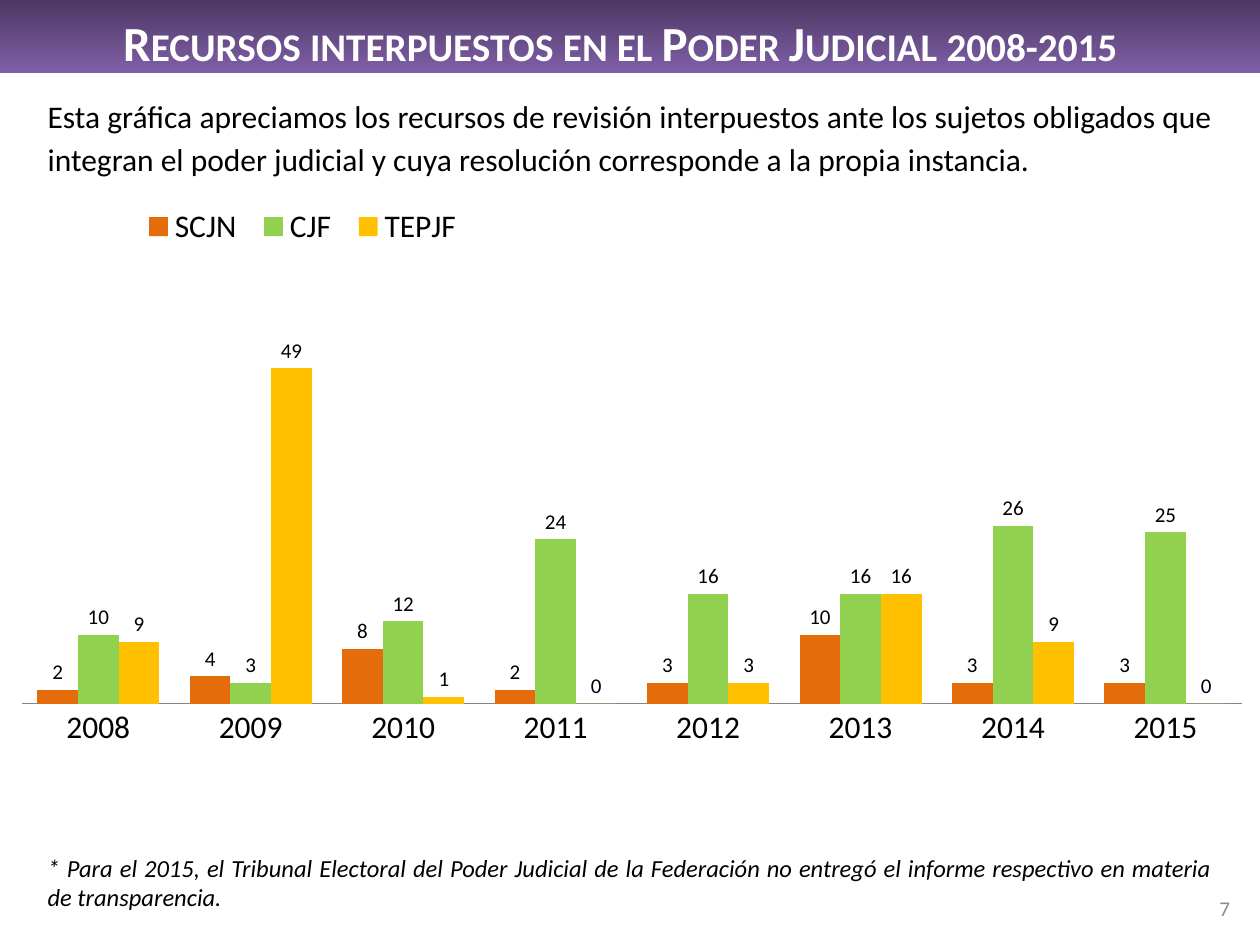
from lxml import etree
from pptx import Presentation
from pptx.chart.data import CategoryChartData
from pptx.dml.color import RGBColor
from pptx.enum.chart import XL_CHART_TYPE, XL_LABEL_POSITION, XL_LEGEND_POSITION, XL_TICK_MARK
from pptx.enum.shapes import MSO_SHAPE
from pptx.enum.text import MSO_ANCHOR, PP_ALIGN
from pptx.oxml import parse_xml
from pptx.oxml.ns import nsdecls, qn
from pptx.util import Inches, Pt

COLUMNS = XL_CHART_TYPE.COLUMN_CLUSTERED
ABOVE = XL_LABEL_POSITION.OUTSIDE_END
BOTTOM = XL_LEGEND_POSITION.BOTTOM
NO_TICK = XL_TICK_MARK.NONE
RECT = MSO_SHAPE.RECTANGLE
TOP, MIDDLE = MSO_ANCHOR.TOP, MSO_ANCHOR.MIDDLE
CENTER, RIGHT, JUSTIFY = PP_ALIGN.CENTER, PP_ALIGN.RIGHT, PP_ALIGN.JUSTIFY

FONT = "Calibri"
HEX = {"dark": "4C3863", "light": "805FA7", "white": "FFFFFF", "black": "000000",
       "gray": "8C8C8C", "axis": "868686",
       "SCJN": "E46C0A", "CJF": "92D050", "TEPJF": "FFC000"}
COLOR = {name: RGBColor.from_string(code) for name, code in HEX.items()}
YEARS = [str(year) for year in range(2008, 2016)]
COUNTS = {"SCJN": [2, 4, 8, 2, 3, 10, 3, 3],
          "CJF": [10, 3, 12, 24, 16, 16, 26, 25],
          "TEPJF": [9, 49, 1, 0, 3, 16, 9, 0]}


def write(box, text, size, color, align, anchor=TOP):
    """Fill a text shape with one run and return that run."""
    frame = box.text_frame
    frame.word_wrap = True
    frame.vertical_anchor = anchor
    para = frame.paragraphs[0]
    para.alignment = align
    run = para.add_run()
    run.text = text
    run.font.name, run.font.size = FONT, Pt(size)
    run.font.color.rgb = COLOR[color]
    return run


def arrange(part, index, inner, **shares):
    """Place a chart part by shares (x, y, w, h) of the chart's size."""
    for old in part.findall(qn("c:layout")):
        part.remove(old)
    layout = parse_xml(f"<c:layout {nsdecls('c')}><c:manualLayout/></c:layout>")
    rules = {"layoutTarget": "inner"} if inner else {}
    rules.update(xMode="edge", yMode="edge", **shares)
    for tag, val in rules.items():
        etree.SubElement(layout[0], qn("c:" + tag)).set("val", str(val))
    part.insert(index, layout)


deck = Presentation()
deck.slide_width, deck.slide_height = Inches(10), Inches(7.5)
slide = deck.slides.add_slide(deck.slide_layouts[5])
shapes = slide.shapes

# Header band with the title
band = shapes.add_shape(RECT, 0, 0, deck.slide_width, Inches(0.58))
band.shadow.inherit = False
band.line.fill.background()
band.fill.gradient()
band.fill.gradient_angle = 270
for stop, name in zip(band.fill.gradient_stops, ("dark", "light")):
    stop.color.rgb = COLOR[name]

title = shapes.title
title.element.addprevious(band.element)
title.left, title.top = Inches(0.2), Inches(0.05)
title.width, title.height = Inches(9.45), Inches(0.57)
run = write(title, "Recursos interpuestos en el Poder Judicial 2008-2015", 28, "white", CENTER)
run.font.bold = True
props = run.font.fill and run.text and title.text_frame.paragraphs[0].runs[0].font
look = title.element.find(".//" + qn("a:rPr"))
look.set("cap", "small")
look.find(qn("a:solidFill")).addnext(parse_xml(
    f'<a:effectLst {nsdecls("a")}><a:outerShdw blurRad="38100" dist="38100" dir="2700000">'
    '<a:srgbClr val="000000"><a:alpha val="60000"/></a:srgbClr></a:outerShdw></a:effectLst>'))

# Chart
data = CategoryChartData(number_format="#,##0")
data.categories = YEARS
for name, counts in COUNTS.items():
    data.add_series(name, counts)
chart = shapes.add_chart(COLUMNS, Inches(0.17), Inches(1.5),
                         Inches(9.69), Inches(4.59), data).chart
chart.has_title = False
chart.font.name, chart.font.size = FONT, Pt(18)
chart.font.color.rgb = COLOR["black"]

plot = chart.plots[0]
plot.gap_width, plot.overlap = 75, 0
plot.vary_by_categories = False
for series in plot.series:
    series.format.fill.solid()
    series.format.fill.fore_color.rgb = COLOR[series.name]
    labels = series.data_labels
    labels.show_value, labels.position = True, ABOVE
    labels.font.name, labels.font.size = FONT, Pt(12)
    labels.font.color.rgb = COLOR["black"]

chart.category_axis.major_tick_mark = NO_TICK
chart.category_axis.format.line.color.rgb = COLOR["axis"]
scale = chart.value_axis
scale.visible = scale.has_major_gridlines = False
scale.minimum_scale, scale.maximum_scale = 0, 60

chart.has_legend = True
chart.legend.position = BOTTOM
chart.legend.include_in_layout = False
arrange(chart.element.find(".//" + qn("c:plotArea")), 0, True, x=0, y=0.18, w=1, h=0.71)
arrange(chart.element.find(".//" + qn("c:legend")), 1, False, x=0.09, y=0.02, w=0.28, h=0.09)

# Page number, introduction and footnote
page = shapes.add_textbox(Inches(9.46), Inches(7.01), Inches(0.4), Inches(0.4))
write(page, "7", 12, "gray", RIGHT, MIDDLE)

intro = shapes.add_textbox(Inches(0.28), Inches(0.68), Inches(9.44), Inches(0.79))
write(intro, "Esta gráfica apreciamos los recursos de revisión interpuestos ante los sujetos "
      "obligados que integran el poder judicial y cuya resolución corresponde a la propia "
      "instancia.", 18, "black", JUSTIFY)
intro.text_frame.paragraphs[0].line_spacing = 1.14

note = shapes.add_textbox(Inches(0.28), Inches(6.72), Inches(9.44), Inches(0.57))
run = write(note, "* Para el 2015, el Tribunal Electoral del Poder Judicial de la Federación no "
            "entregó el informe respectivo en materia de transparencia.", 14, "black", JUSTIFY)
run.font.italic = True

deck.save("out.pptx")
